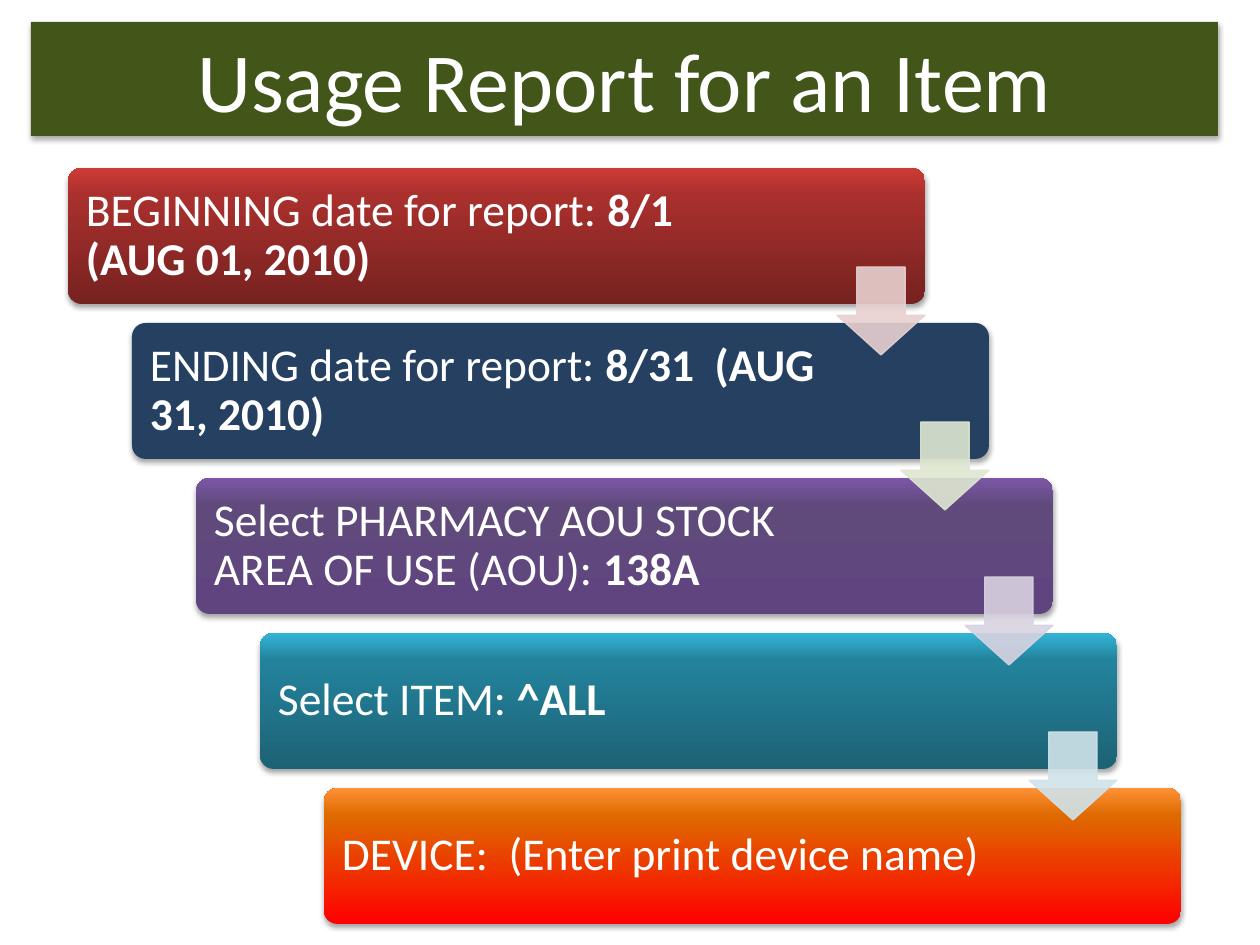
from copy import deepcopy
from dataclasses import dataclass

from lxml import etree
from pptx import Presentation
from pptx import util as u
from pptx.dml.color import RGBColor
from pptx.enum import shapes, text
from pptx.oxml.ns import qn

SCALE = 914400 / 126
WHITE = "FFFFFF"
FONT = "Calibri"
STEP_X, STEP_Y = 64, 155
STOPS = (0, 0.8, 1)
KIND = shapes.MSO_SHAPE


@dataclass
class Box:
    x: int
    y: int
    w: int
    h: int

    def shift(self, n: int) -> "Box":
        return Box(self.x + n * STEP_X, self.y + n * STEP_Y, self.w, self.h)


@dataclass
class Step:
    plain: str
    bold: str
    fills: tuple[str, ...]
    arrow: str = ""


TITLE = Box(31, 22, 1187, 114)
BAR = Box(68, 168, 857, 136)
LABEL = Box(72, 172, 696, 128)
ARROW = Box(837, 267, 88, 88)

STEPS = [
    Step("BEGINNING date for report: ", "8/1  (AUG 01, 2010)",
         ("762220", "A9302D", "CE3B37"), "E8D0D0"),
    Step("ENDING date for report: ", "8/31  (AUG 31, 2010)",
         ("254061",), "DEE7D1"),
    Step("Select PHARMACY AOU STOCK AREA OF USE (AOU): ", "138A",
         ("5F4480", "604A7B", "7C57A8"), "D8D3E0"),
    Step("Select ITEM: ", "^ALL",
         ("1D6275", "23839D", "34B4D6"), "D0E3EA"),
    Step("DEVICE:  (Enter print device name)", "",
         ("FF0000", "DE6A00", "FF9136")),
]


def px(n: int) -> u.Emu:
    return u.Emu(round(n * SCALE))


def place(box: Box) -> list[u.Emu]:
    return [px(n) for n in (box.x, box.y, box.w, box.h)]


def tint(spot, code: str) -> None:
    spot.rgb = RGBColor.from_string(code)


def apply(thing, form: dict) -> None:
    for name, value in form.items():
        setattr(thing, name, value)


def paint(shape, fills: tuple[str, ...]) -> None:
    if len(fills) == 1:
        shape.fill.solid()
        tint(shape.fill.fore_color, fills[0])
        return
    shape.fill.gradient()
    shape.fill.gradient_angle = 90
    stops = shape._element.spPr.find(".//" + qn("a:gsLst"))
    stops.append(deepcopy(stops[0]))
    for stop, spot, code in zip(shape.fill.gradient_stops, STOPS, fills):
        stop.position = spot
        tint(stop.color, code)


def shade(shape) -> None:
    effects = shape._element.spPr.find(qn("a:effectLst"))
    outer = etree.SubElement(effects, qn("a:outerShdw"), blurRad="40000",
                             dist="23000", dir="5400000", rotWithShape="0")
    black = etree.SubElement(outer, qn("a:srgbClr"), val="000000")
    etree.SubElement(black, qn("a:alpha"), val="35000")


def draw(slide, kind, box: Box, fills: tuple[str, ...]):
    shape = slide.shapes.add_shape(kind, *place(box))
    shape.shadow.inherit = False
    shape.line.fill.background()
    paint(shape, fills)
    return shape


def write(para, words: str, size: int, bold: bool = False) -> None:
    run = para.add_run()
    run.text = words
    apply(run.font, dict(name=FONT, size=u.Pt(size), bold=bold))
    tint(run.font.color, WHITE)


def head(slide) -> None:
    shape = draw(slide, KIND.RECTANGLE, TITLE, ("42561A",))
    shade(shape)
    apply(shape.text_frame, dict(vertical_anchor=text.MSO_ANCHOR.TOP,
                                 auto_size=text.MSO_AUTO_SIZE.SHAPE_TO_FIT_TEXT))
    para = shape.text_frame.paragraphs[0]
    para.alignment = text.PP_ALIGN.CENTER
    write(para, "Usage Report for an Item", 48)


def bar(slide, n: int, step: Step) -> None:
    shape = draw(slide, KIND.ROUNDED_RECTANGLE, BAR.shift(n), step.fills)
    shape.adjustments[0] = 0.1
    shade(shape)
    frame = slide.shapes.add_textbox(*place(LABEL.shift(n))).text_frame
    sides = ("left", "top", "right", "bottom")
    apply(frame, {f"margin_{side}": px(14) for side in sides})
    apply(frame, dict(word_wrap=True, vertical_anchor=text.MSO_ANCHOR.MIDDLE))
    para = frame.paragraphs[0]
    para.line_spacing = 0.9
    write(para, step.plain, 26)
    if step.bold:
        write(para, step.bold, 26, True)


def arrow(slide, n: int, code: str) -> None:
    shape = draw(slide, KIND.DOWN_ARROW, ARROW.shift(n), (code,))
    shape.adjustments[0] = 0.55
    shape.adjustments[1] = 0.45
    shape.line.width = u.Pt(0.75)
    tint(shape.line.color, code)
    for spot in shape._element.spPr.iter(qn("a:srgbClr")):
        etree.SubElement(spot, qn("a:alpha"), val="90000")


def main() -> None:
    deck = Presentation()
    apply(deck, dict(slide_width=px(1260), slide_height=px(945)))
    slide = deck.slides.add_slide(deck.slide_layouts[6])
    head(slide)
    for n, step in enumerate(STEPS):
        bar(slide, n, step)
    for n, step in enumerate(STEPS):
        if step.arrow:
            arrow(slide, n, step.arrow)
    deck.save("out.pptx")


if __name__ == "__main__":
    main()
